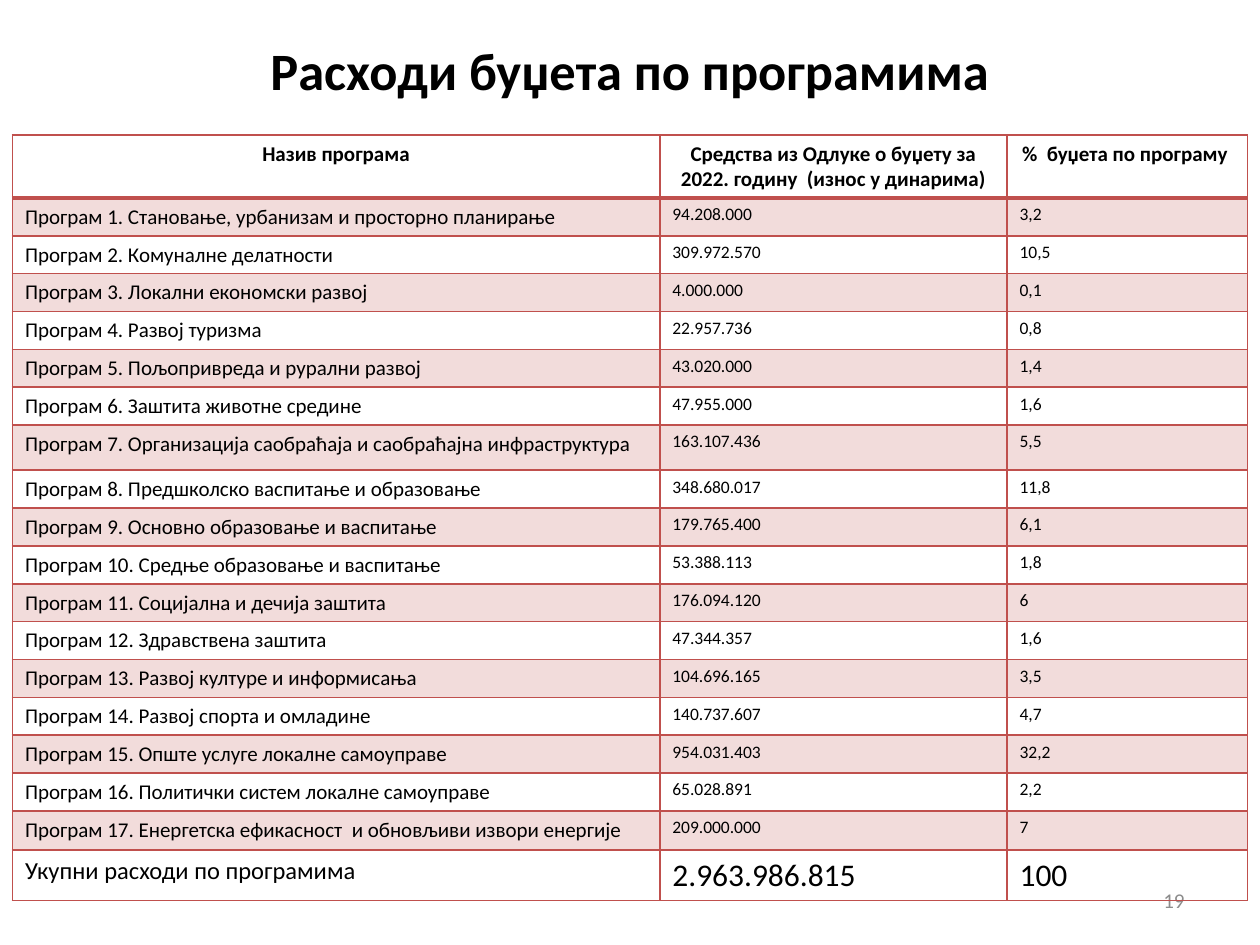
from dataclasses import dataclass

from lxml import etree
from pptx import Presentation
from pptx.dml.color import RGBColor
from pptx.enum.text import MSO_ANCHOR, PP_ALIGN
from pptx.oxml.ns import qn
from pptx.util import Cm, Pt

LEFT, CENTER, RIGHT = PP_ALIGN.LEFT, PP_ALIGN.CENTER, PP_ALIGN.RIGHT
MIDDLE = MSO_ANCHOR.MIDDLE
TITLE_ONLY = 5


@dataclass(frozen=True)
class Theme:
    font: str = "Calibri"
    text: str = "000000"
    muted: str = "8C8C8C"
    accent: str = "C0504D"
    band_opacity: int = 20
    title: int = 30
    total: int = 18
    total_label: int = 14
    label: int = 12
    value: int = 10
    rule: int = 1
    header_rule: int = 2


THEME = Theme()

HEADERS = (
    "Назив програма",
    "Средства из Одлуке о буџету за 2022. годину  (износ у динарима)",
    "%  буџета по програму ",
)
PROGRAMS = (
    ("Становање, урбанизам и просторно планирање", "94.208.000", "3,2"),
    ("Комуналне делатности", "309.972.570", "10,5"),
    ("Локални економски развој", "4.000.000", "0,1"),
    ("Развој туризма", "22.957.736", "0,8"),
    ("Пољопривреда и рурални развој", "43.020.000", "1,4"),
    ("Заштита животне средине", "47.955.000", "1,6"),
    ("Организација саобраћаја и саобраћајна инфраструктура", "163.107.436", "5,5"),
    ("Предшколско васпитање и образовање", "348.680.017", "11,8"),
    ("Основно образовање и васпитање", "179.765.400", "6,1"),
    ("Средње образовање и васпитање", "53.388.113", "1,8"),
    ("Социјална и дечија заштита", "176.094.120", "6"),
    ("Здравствена заштита", "47.344.357", "1,6"),
    ("Развој културе и информисања", "104.696.165", "3,5"),
    ("Развој спорта и омладине", "140.737.607", "4,7"),
    ("Опште услуге локалне самоуправе", "954.031.403", "32,2"),
    ("Политички систем локалне самоуправе", "65.028.891", "2,2"),
    ("Енергетска ефикасност  и обновљиви извори енергије", "209.000.000", "7"),
)
TOTAL = ("Укупни расходи по програмима", "2.963.986.815", "100")

COLUMN_WIDTHS = (13.05, 7.0, 4.85)
HEADER_HEIGHT, ROW_HEIGHT, TOTAL_HEIGHT = 1.24, 0.74, 0.99
SPECIAL_HEIGHTS = {7: 0.91, 17: 0.79}


def write(tf, text, size, color=THEME.text, bold=False, align=LEFT):
    p = tf.paragraphs[0]
    p.alignment = align
    r = p.add_run()
    r.text = text
    r.font.name = THEME.font
    r.font.size = Pt(size)
    r.font.bold = bold
    r.font.color.rgb = RGBColor.from_string(color)


def add_title(slide, text):
    sp = slide.shapes.title
    sp.left, sp.top, sp.width, sp.height = Cm(1.88), Cm(0.33), Cm(21.64), Cm(2.16)
    sp.text_frame.vertical_anchor = MIDDLE
    write(sp.text_frame, text, THEME.title, bold=True, align=CENTER)


def add_page_number(slide, number):
    sp = slide.shapes.add_textbox(Cm(18.2), Cm(17.65), Cm(5.93), Cm(1.01))
    tf = sp.text_frame
    tf.word_wrap = True
    tf.vertical_anchor = MIDDLE
    write(tf, number, THEME.label, THEME.muted, align=RIGHT)


def set_borders(cell, top, bottom):
    """Rule all four sides; call before filling, as lines come first in tcPr."""
    tc_pr = cell._tc.get_or_add_tcPr()
    sides = {"L": THEME.rule, "R": THEME.rule, "T": top, "B": bottom}
    for side, width in sides.items():
        ln = etree.SubElement(tc_pr, qn(f"a:ln{side}"), w=str(Pt(width)))
        fill = etree.SubElement(ln, qn("a:solidFill"))
        etree.SubElement(fill, qn("a:srgbClr"), val=THEME.accent)


def fill_band(cell):
    cell.fill.solid()
    cell.fill.fore_color.rgb = RGBColor.from_string(THEME.accent)
    color = cell._tc.tcPr.find(qn("a:solidFill")).find(qn("a:srgbClr"))
    etree.SubElement(color, qn("a:alpha"), val=str(THEME.band_opacity * 1000))


def add_row(table, i, texts, height, sizes, header=False, banded=False):
    table.rows[i].height = Cm(height)
    top = THEME.header_rule if i == 1 else THEME.rule
    bottom = THEME.header_rule if header else THEME.rule
    for cell, text, size in zip(table.rows[i].cells, texts, sizes):
        set_borders(cell, top, bottom)
        if banded:
            fill_band(cell)
        else:
            cell.fill.background()
        write(cell.text_frame, text, size, bold=header,
              align=CENTER if header else LEFT)


def add_budget_table(slide):
    last = len(PROGRAMS) + 1
    frame = slide.shapes.add_table(last + 1, len(HEADERS), Cm(0.25), Cm(2.72),
                                   Cm(sum(COLUMN_WIDTHS)), Cm(15.42))
    table = frame.table
    table.first_row = table.horz_banding = False
    for column, width in zip(table.columns, COLUMN_WIDTHS):
        column.width = Cm(width)

    add_row(table, 0, HEADERS, HEADER_HEIGHT, (THEME.label,) * 3, header=True)
    for i, (name, amount, share) in enumerate(PROGRAMS, start=1):
        add_row(table, i, (f"Програм {i}. {name}", amount, share),
                SPECIAL_HEIGHTS.get(i, ROW_HEIGHT),
                (THEME.label, THEME.value, THEME.value), banded=i % 2 == 1)
    add_row(table, last, TOTAL, TOTAL_HEIGHT,
            (THEME.total_label, THEME.total, THEME.total))


def main():
    prs = Presentation()
    prs.slide_width, prs.slide_height = Cm(25.4), Cm(19.05)
    slide = prs.slides.add_slide(prs.slide_layouts[TITLE_ONLY])
    add_title(slide, "Расходи буџета по програмима")
    add_page_number(slide, "19")
    add_budget_table(slide)
    prs.save("out.pptx")


if __name__ == "__main__":
    main()
